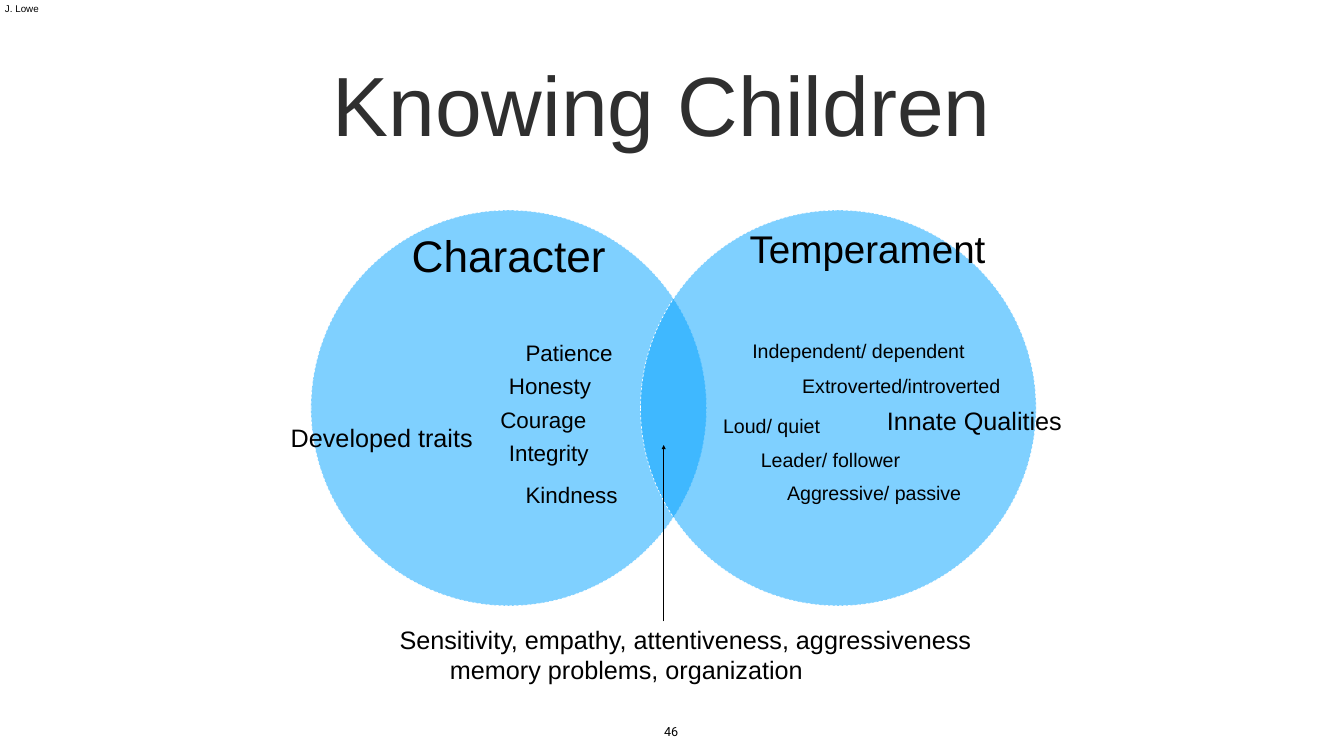
from dataclasses import dataclass

from lxml import etree
from pptx import Presentation
from pptx.dml.color import RGBColor
from pptx.enum import dml, shapes, text
from pptx.oxml.ns import qn
from pptx.util import Inches, Pt

COLORS = {"circle": "00A2FF", "outline": "FFFFFF", "text": "000000", "title": "2F2F2F"}
CIRCLE_SIZE = 7.85
CIRCLE_TOP = 4.17
TRAIT_SIZE = 32
QUALITY_SIZE = 28
NOTE_SIZE = 36


@dataclass
class Label:
    words: str
    left: float
    top: float
    width: float
    height: float
    size: float


HEADINGS = [
    Label("Character", 7.32, 4.43, 5.55, 1.26, 63.1),
    Label("Temperament", 14.44, 4.36, 5.55, 1.13, 55.1),
]
LABELS = [
    Label("Innate Qualities", 17.5, 8, 3.71, 0.71, NOTE_SIZE),
    Label("Developed traits", 5.67, 8.33, 3.85, 0.71, NOTE_SIZE),
    Label("Patience", 10.33, 6.67, 1.95, 0.64, TRAIT_SIZE),
    Label("Honesty", 10, 7.33, 1.85, 0.64, TRAIT_SIZE),
    Label("Courage", 9.83, 8, 1.92, 0.64, TRAIT_SIZE),
    Label("Integrity", 10, 8.67, 1.8, 0.64, TRAIT_SIZE),
    Label("Kindness", 10.33, 9.5, 2.05, 0.64, TRAIT_SIZE),
    Label("Independent/ dependent", 14.83, 6.67, 5.16, 0.57, QUALITY_SIZE),
    Label("Extroverted/introverted", 15.82, 7.37, 4.49, 0.71, QUALITY_SIZE),
    Label("Loud/ quiet", 14.25, 8.17, 2.62, 0.57, QUALITY_SIZE),
    Label("Leader/ follower", 15, 8.83, 3.7, 0.57, QUALITY_SIZE),
    Label("Aggressive/ passive", 15.52, 9.5, 3.85, 0.57, QUALITY_SIZE),
    Label("J. Lowe", 0, 0, 3.28, 3.28, 14),
]


def rgb(name: str) -> RGBColor:
    return RGBColor.from_string(COLORS[name])


def write_text(shape, words: str, *, size: float, color: str = "text", font: str = "Arial",
               align=text.PP_ALIGN.LEFT, anchor=text.MSO_ANCHOR.TOP,
               margins: tuple[float, float] = (0.1, 0.05), wrap: bool = True) -> None:
    """Fill a shape with one paragraph per line; margins are side, then top and bottom."""
    frame = shape.text_frame
    frame.word_wrap = wrap
    frame.auto_size = text.MSO_AUTO_SIZE.NONE
    frame.vertical_anchor = anchor
    frame.margin_left = frame.margin_right = Inches(margins[0])
    frame.margin_top = frame.margin_bottom = Inches(margins[1])
    frame.text = words
    for paragraph in frame.paragraphs:
        paragraph.alignment = align
        paragraph.line_spacing = 1.0
        paragraph.space_before = Pt(0)
        paragraph.font.size = Pt(size)
        paragraph.font.name = font
        paragraph.font.color.rgb = rgb(color)


def add_label(slide, label: Label, **text_format):
    box = slide.shapes.add_textbox(Inches(label.left), Inches(label.top),
                                   Inches(label.width), Inches(label.height))
    write_text(box, label.words, size=label.size, **text_format)
    return box


def add_circle(slide, left: float) -> None:
    circle = slide.shapes.add_shape(shapes.MSO_SHAPE.OVAL, Inches(left), Inches(CIRCLE_TOP),
                                    Inches(CIRCLE_SIZE), Inches(CIRCLE_SIZE))
    circle.shadow.inherit = False
    circle.fill.solid()
    circle.fill.fore_color.rgb = rgb("circle")
    color = circle.fill._xPr.find(f".//{qn('a:srgbClr')}")
    etree.SubElement(color, qn("a:alpha"), val="50000")
    circle.line.color.rgb = rgb("outline")
    circle.line.width = Pt(0.9)
    circle.line.dash_style = dml.MSO_LINE.DASH


def add_arrow(slide, x: float, start_y: float, end_y: float) -> None:
    arrow = slide.shapes.add_connector(shapes.MSO_CONNECTOR.STRAIGHT, Inches(x),
                                       Inches(start_y), Inches(x), Inches(end_y))
    arrow.line.color.rgb = rgb("text")
    arrow.line.width = Pt(0.75)
    etree.SubElement(arrow.line._get_or_add_ln(), qn("a:tailEnd"), type="triangle")
    etree.SubElement(arrow._element.spPr, qn("a:effectLst"))


def main() -> None:
    presentation = Presentation()
    presentation.slide_width = Inches(26.67)
    presentation.slide_height = Inches(15)
    slide = presentation.slides.add_slide(presentation.slide_layouts[5])

    title = slide.shapes.title
    title.left, title.top = Inches(6.5), Inches(1)
    title.width, title.height = Inches(13.39), Inches(2.12)
    write_text(title, "Knowing Children", size=120, color="title")

    for left, heading in zip((6.17, 12.71), HEADINGS):
        add_circle(slide, left)
        add_label(slide, heading, align=text.PP_ALIGN.CENTER,
                  anchor=text.MSO_ANCHOR.MIDDLE, margins=(0.1, 0.1))

    add_arrow(slide, 13.17, 12.33, 8.83)
    shared = add_label(slide, Label(
        "Sensitivity, empathy, attentiveness, aggressiveness\nmemory problems, organization",
        7.83, 12.33, 11.73, 1.31, NOTE_SIZE))
    second_line = shared.text_frame.paragraphs[1]
    second_line._p.get_or_add_pPr().set("marL", str(Inches(1)))

    for label in LABELS:
        add_label(slide, label)
    add_label(slide, Label("46", 13.07, 14.31, 0.5, 0.41, 18), font="Roboto",
              align=text.PP_ALIGN.CENTER, anchor=text.MSO_ANCHOR.BOTTOM,
              margins=(0.06, 0.06), wrap=False)

    presentation.save("out.pptx")


if __name__ == "__main__":
    main()
